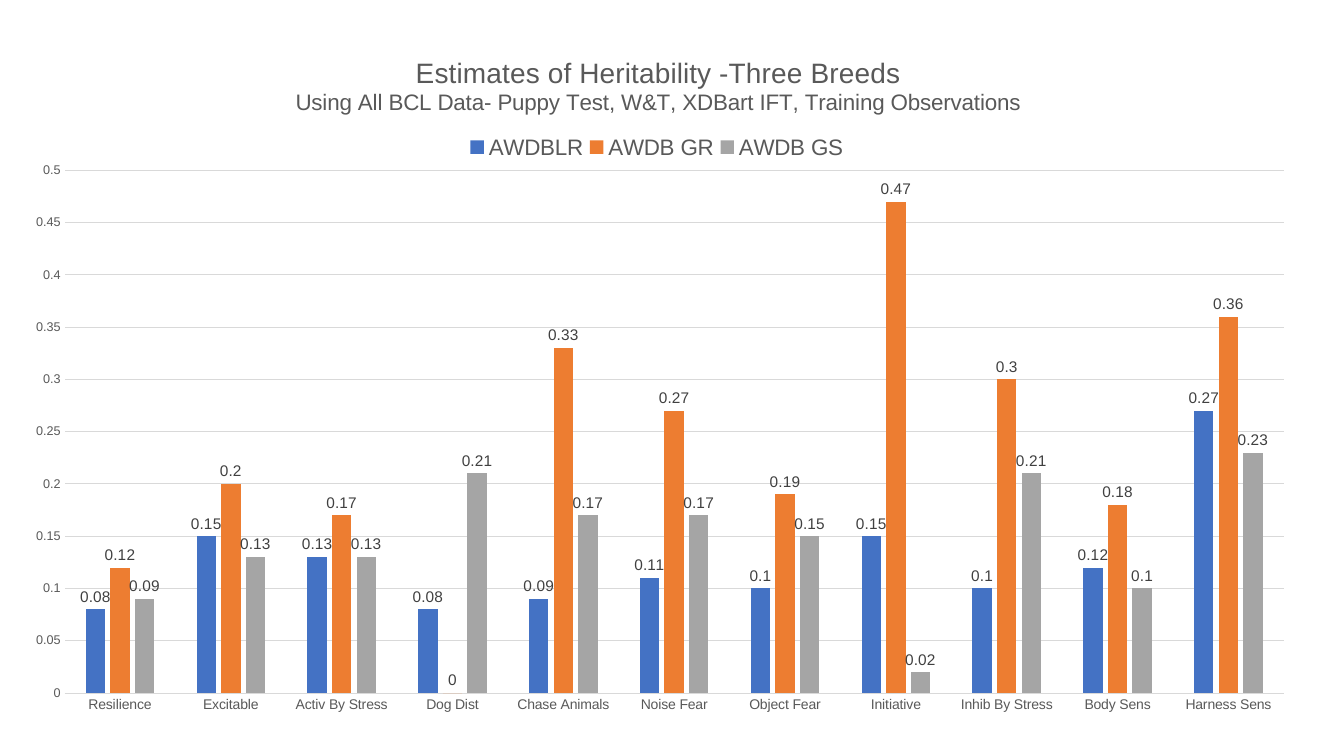
from lxml import etree
from pptx import Presentation
from pptx.chart.data import CategoryChartData
from pptx.dml.color import RGBColor
from pptx.enum.chart import XL_CHART_TYPE as ChartType
from pptx.enum.chart import XL_LABEL_POSITION as LabelPosition
from pptx.enum.chart import XL_LEGEND_POSITION as LegendPosition
from pptx.enum.chart import XL_TICK_MARK as TickMark
from pptx.oxml.ns import qn
from pptx.util import Inches, Pt

FONT = "Arial"
BLACK = RGBColor(0x00, 0x00, 0x00)
GREY_TEXT = RGBColor(0x59, 0x59, 0x59)
LABEL_TEXT = RGBColor(0x40, 0x40, 0x40)
GRID = RGBColor(0xD9, 0xD9, 0xD9)
BLUE = RGBColor(0x44, 0x72, 0xC4)
ORANGE = RGBColor(0xED, 0x7D, 0x31)
GREY = RGBColor(0xA5, 0xA5, 0xA5)

TITLE_LINES = [
    ("Estimates of Heritability -Three Breeds", 20),
    ("Using All BCL Data- Puppy Test, W&T, XDBart IFT, Training Observations", 16),
]
TRAITS = ["Resilience", "Excitable", "Activ By Stress", "Dog Dist", "Chase Animals",
          "Noise Fear", "Object Fear", "Initiative", "Inhib By Stress", "Body Sens",
          "Harness Sens"]
BREEDS = [
    ("AWDBLR", BLUE, [0.08, 0.15, 0.13, 0.08, 0.09, 0.11, 0.1, 0.15, 0.1, 0.12, 0.27]),
    ("AWDB GR", ORANGE, [0.12, 0.2, 0.17, 0, 0.33, 0.27, 0.19, 0.47, 0.3, 0.18, 0.36]),
    ("AWDB GS", GREY, [0.09, 0.13, 0.13, 0.21, 0.17, 0.17, 0.15, 0.02, 0.21, 0.1, 0.23]),
]


def style_font(font, size, color):
    font.name = FONT
    font.size = Pt(size)
    font.bold = False
    font.color.rgb = color


def style_line(line):
    line.color.rgb = GRID
    line.width = Pt(0.75)


def set_layout(element, index, **fractions):
    """Place a chart part by fractions of the chart area; index is its schema position."""
    for old_layout in element.findall(qn("c:layout")):
        element.remove(old_layout)
    layout = etree.Element(qn("c:layout"))
    manual = etree.SubElement(layout, qn("c:manualLayout"))
    if element.tag == qn("c:plotArea"):
        etree.SubElement(manual, qn("c:layoutTarget")).set("val", "inner")
    for side in ("x", "y"):
        etree.SubElement(manual, qn(f"c:{side}Mode")).set("val", "edge")
    for name, value in fractions.items():
        etree.SubElement(manual, qn(f"c:{name}")).set("val", str(value))
    element.insert(index, layout)


def add_chart_title(chart):
    frame = chart.chart_title.text_frame
    for number, (line, size) in enumerate(TITLE_LINES):
        paragraph = frame.paragraphs[0] if number == 0 else frame.add_paragraph()
        run = paragraph.add_run()
        run.text = line
        style_font(run.font, size, GREY_TEXT)
    set_layout(chart.chart_title._element, 1, x=0.217, y=0.022)


def add_legend(chart):
    chart.has_legend = True
    legend = chart.legend
    legend.position = LegendPosition.TOP
    legend.include_in_layout = False
    style_font(legend.font, 16, GREY_TEXT)
    set_layout(legend._element, 1, x=0.35, y=0.135, w=0.3, h=0.045)


def style_axes(chart):
    traits, heritability = chart.category_axis, chart.value_axis
    for axis, size in ((traits, 10), (heritability, 9)):
        axis.major_tick_mark = axis.minor_tick_mark = TickMark.NONE
        style_font(axis.tick_labels.font, size, GREY_TEXT)
    style_line(traits.format.line)
    heritability.format.line.fill.background()
    heritability.minimum_scale, heritability.maximum_scale = 0, 0.5
    heritability.major_unit = 0.05
    style_line(heritability.major_gridlines.format.line)


def style_bars(plot):
    plot.gap_width = 219
    plot.overlap = -27
    plot.vary_by_categories = False
    for bars, (_, color, _) in zip(plot.series, BREEDS):
        bars.invert_if_negative = False
        bars.format.fill.solid()
        bars.format.fill.fore_color.rgb = color
        labels = bars.data_labels
        labels.show_value = True
        labels.position = LabelPosition.OUTSIDE_END
        style_font(labels.font, 11, LABEL_TEXT)


def add_heritability_chart(slide, left, top, width, height):
    data = CategoryChartData()
    data.categories = TRAITS
    for breed, _, values in BREEDS:
        data.add_series(breed, values)
    chart = slide.shapes.add_chart(
        ChartType.COLUMN_CLUSTERED, left, top, width, height, data).chart
    style_font(chart.font, 10, BLACK)
    add_chart_title(chart)
    add_legend(chart)
    style_axes(chart)
    style_bars(chart.plots[0])
    plot_area = chart._chartSpace.chart.plotArea
    set_layout(plot_area, 0, x=0.04, y=0.191, w=0.947, h=0.756)


def main():
    presentation = Presentation()
    presentation.slide_width = Inches(13.33)
    presentation.slide_height = Inches(7.5)
    slide = presentation.slides.add_slide(presentation.slide_layouts[6])
    add_heritability_chart(slide, Inches(0.13), Inches(0.38), Inches(12.77), Inches(6.86))
    presentation.save("out.pptx")


if __name__ == "__main__":
    main()
